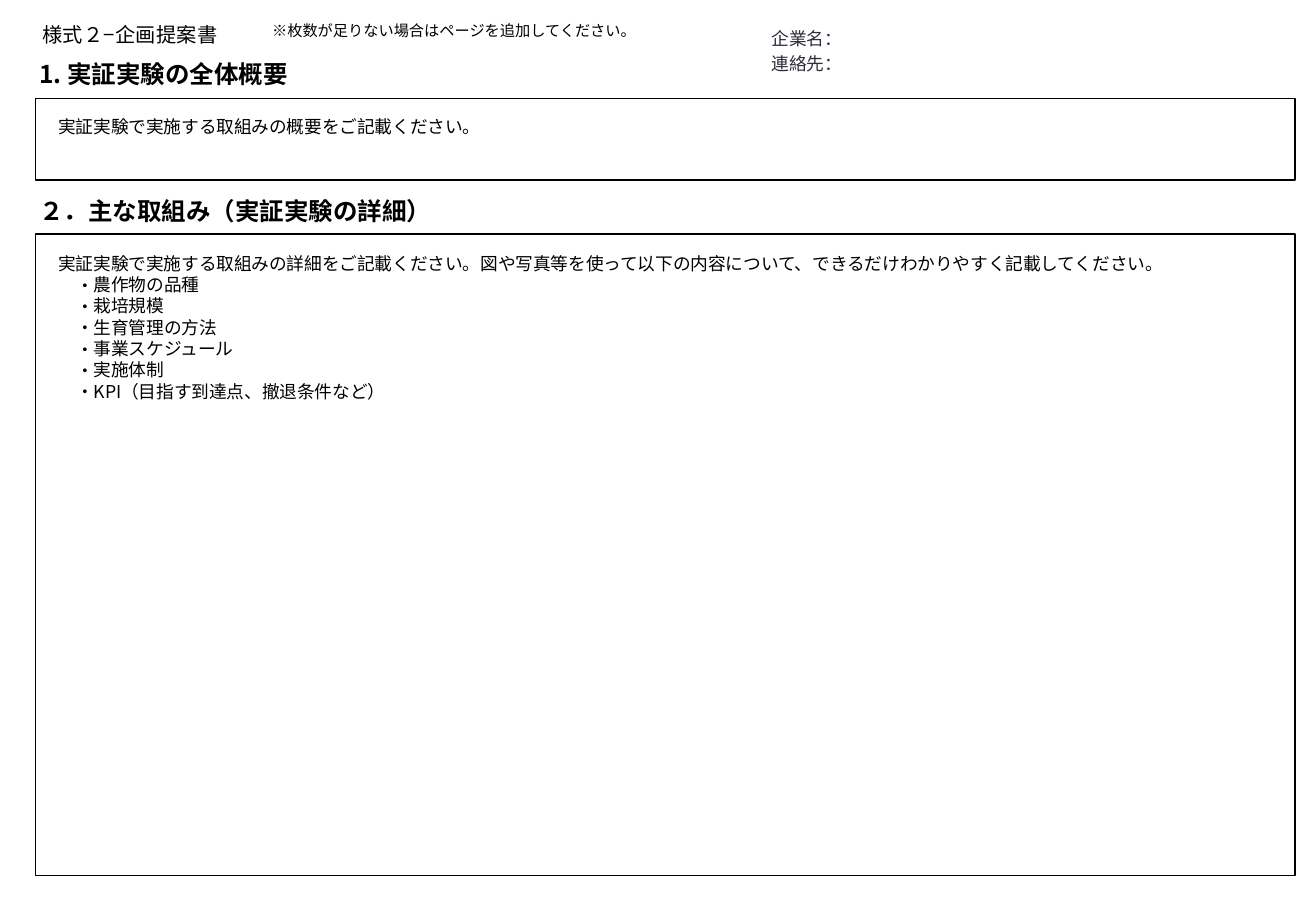
from lxml.etree import SubElement
from pptx import Presentation
from pptx.dml.color import RGBColor
from pptx.enum.shapes import MSO_SHAPE
from pptx.enum.text import MSO_ANCHOR, MSO_AUTO_SIZE, PP_ALIGN
from pptx.oxml.ns import qn
from pptx.util import Cm, Pt

BLACK = RGBColor(0x00, 0x00, 0x00)
WHITE = RGBColor(0xFF, 0xFF, 0xFF)
SLATE = RGBColor(0x2E, 0x2E, 0x38)

FONT = "Noto Sans CJK JP"
BODY_SIZE = 10.5
HEADING_SIZE = 14.5
LINE_FACTOR = 1.2
BULLET_INDENT = Cm(0.37)

TOPICS = [
    "農作物の品種",
    "栽培規模",
    "生育管理の方法",
    "事業スケジュール",
    "実施体制",
    "KPI（目指す到達点、撤退条件など）",
]


def format_paragraph(paragraph, size, color=BLACK, bold=False):
    paragraph.alignment = PP_ALIGN.LEFT
    paragraph.line_spacing = Pt(size * LINE_FACTOR)
    for span in paragraph.runs:
        span.font.size = Pt(size)
        span.font.bold = bold
        span.font.color.rgb = color
        span.font.name = FONT
        SubElement(span.font._element, qn("a:ea")).set("typeface", FONT)


def set_insets(frame, left, others):
    frame.margin_left = Cm(left)
    frame.margin_top = frame.margin_right = frame.margin_bottom = Cm(others)


def add_text(slide, left, top, width, height, lines, size, color=BLACK, bold=False):
    box = slide.shapes.add_textbox(Cm(left), Cm(top), Cm(width), Cm(height))
    frame = box.text_frame
    frame.word_wrap = True
    frame.text = "\n".join(lines)
    for paragraph in frame.paragraphs:
        format_paragraph(paragraph, size, color, bold)
    return frame


def add_heading(slide, top, width, text):
    frame = add_text(slide, 0.74, top, width, 0.68, [text], HEADING_SIZE, bold=True)
    frame.vertical_anchor = MSO_ANCHOR.MIDDLE
    set_insets(frame, 0.08, 0.08)


def add_frame(slide, top, height):
    frame = slide.shapes.add_shape(
        MSO_SHAPE.RECTANGLE, Cm(0.74), Cm(top), Cm(26.34), Cm(height))
    frame.shadow.inherit = False
    frame.fill.background()
    frame.line.color.rgb = BLACK
    frame.line.width = Pt(1)


def add_bullets(frame, items):
    for item in items:
        paragraph = frame.add_paragraph()
        paragraph.text = item
        properties = paragraph._p.get_or_add_pPr()
        properties.set("marL", str(2 * BULLET_INDENT))
        properties.set("indent", str(-BULLET_INDENT))
        SubElement(properties, qn("a:buFont")).set("typeface", FONT)
        SubElement(properties, qn("a:buChar")).set("char", "・")
        format_paragraph(paragraph, BODY_SIZE)


def set_title(slide, text):
    title = slide.shapes.title
    title.left, title.top, title.width, title.height = (
        Cm(0.58), Cm(0.41), Cm(13.18), Cm(0.61))
    title.fill.solid()
    title.fill.fore_color.rgb = WHITE
    frame = title.text_frame
    frame.text = text
    frame.auto_size = MSO_AUTO_SIZE.NONE
    frame.vertical_anchor = MSO_ANCHOR.MIDDLE
    set_insets(frame, 0.3, 0)
    format_paragraph(frame.paragraphs[0], 12)
    frame.paragraphs[0].runs[0].font._element.set("spc", "20")


def main():
    deck = Presentation()
    deck.slide_width, deck.slide_height = Cm(27.51), Cm(19.05)
    slide = deck.slides.add_slide(deck.slide_layouts[5])

    # Header
    set_title(slide, "様式２−企画提案書")
    add_text(slide, 5.44, 0.33, 8.53, 0.64,
             ["※枚数が足りない場合はページを追加してください。"], 9)
    contact = add_text(slide, 15.88, 0.41, 11.2, 1.3,
                       ["企業名：", "連絡先："], BODY_SIZE, SLATE)
    contact.vertical_anchor = MSO_ANCHOR.MIDDLE
    contact.paragraphs[1].space_before = Pt(2.1)

    # Section 1: overview
    add_heading(slide, 1.2, 26.04, "1. 実証実験の全体概要")
    add_frame(slide, 2.06, 1.7)
    add_text(slide, 0.97, 2.29, 9.5, 0.71,
             ["実証実験で実施する取組みの概要をご記載ください。"], BODY_SIZE)

    # Section 2: details
    add_heading(slide, 4.07, 10.26, "２．主な取組み（実証実験の詳細）")
    add_frame(slide, 4.9, 13.41)
    details = add_text(
        slide, 0.97, 5.16, 24.08, 3.4,
        ["実証実験で実施する取組みの詳細をご記載ください。図や写真等を使って"
         "以下の内容について、できるだけわかりやすく記載してください。"], BODY_SIZE)
    add_bullets(details, TOPICS)

    deck.save("out.pptx")


if __name__ == "__main__":
    main()
